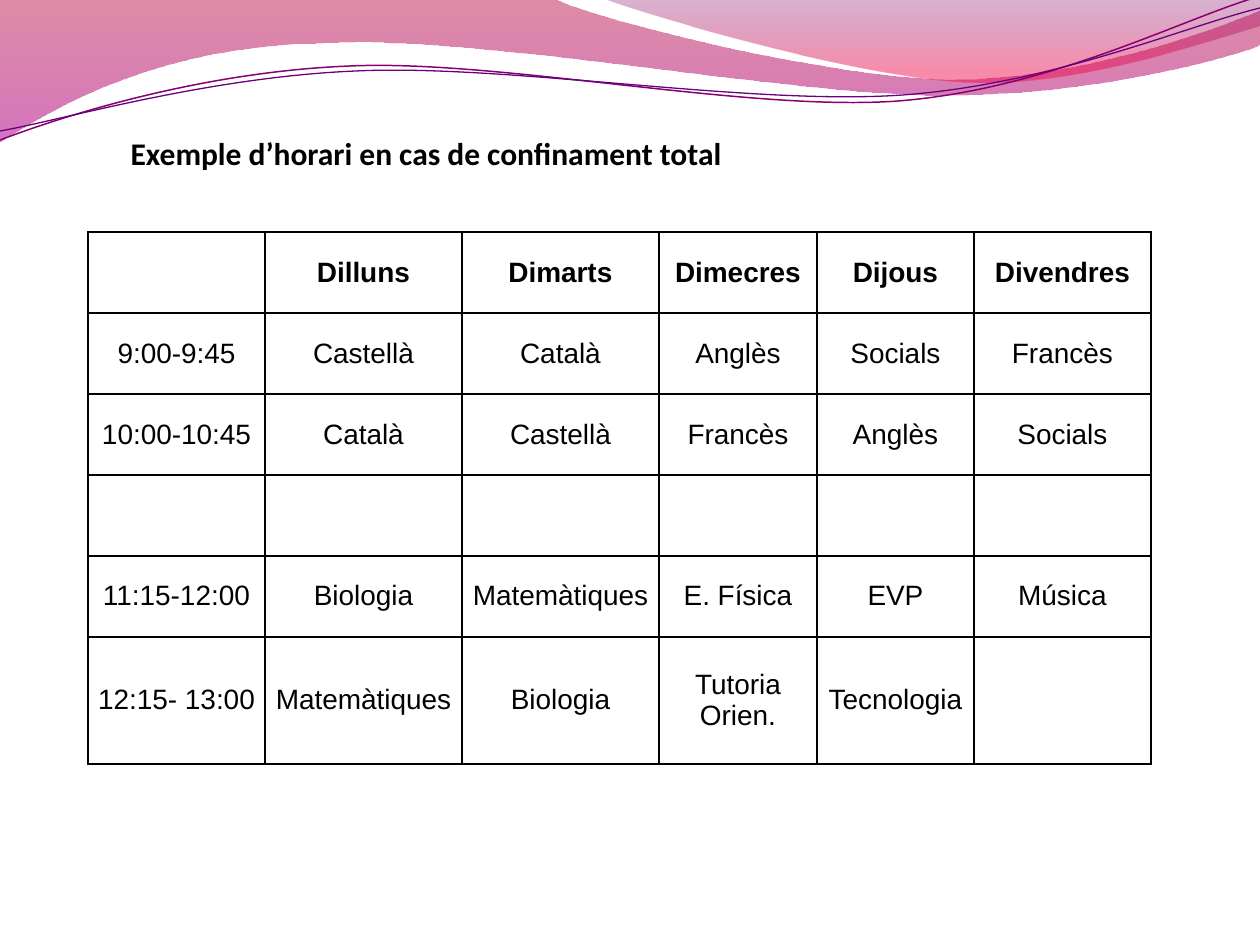
from lxml.etree import SubElement
from pptx import Presentation
from pptx.dml.color import RGBColor
from pptx.enum.text import MSO_ANCHOR, MSO_AUTO_SIZE, PP_ALIGN
from pptx.oxml.ns import qn
from pptx.util import Pt

PX = 7257
BLACK = RGBColor(0x00, 0x00, 0x00)
ROSE = RGBColor(0xB6, 0x00, 0x3C)
MAGENTA = RGBColor(0xB2, 0x00, 0x8A)
PLUM = RGBColor(0x81, 0x00, 0x66)
CRIMSON = RGBColor(0xF0, 0x00, 0x45)
PURPLE = RGBColor(0x88, 0x00, 0x6F)
VIOLET = RGBColor(0x68, 0x00, 0x7F)

BACK_WAVE = [
    [(0, 0)], [(554, -1)],
    [(600, 21), (837, 79), (955, 79)], [(1075, 79), (1207, 33), (1260, 11)],
    [(1261, 45)],
    [(1239, 55), (1096, 96), (940, 95)], [(784, 95), (481, 35), (324, 43)],
    [(163, 45), (58, 105), (-1, 142)],
]
FRONT_WAVE = [
    [(604, -1)],
    [(641, 14), (859, 78), (969, 82)], [(1076, 87), (1211, 40), (1260, 26)],
    [(1260, 0)],
]
UPPER_LINE = [
    [(0, 140)],
    [(60, 117), (199, 72), (349, 66)], [(498, 59), (747, 112), (898, 101)],
    [(1050, 89), (1182, 19), (1257, -3)],
]
LOWER_LINE = [
    [(0, 131)],
    [(59, 121), (207, 77), (357, 71)], [(508, 64), (752, 106), (903, 95)],
    [(1053, 84), (1186, 26), (1260, 8)],
]

TITLE = "Exemple d’horari en cas de confinament total"
TIMETABLE = [
    ["", "Dilluns", "Dimarts", "Dimecres", "Dijous", "Divendres"],
    ["9:00-9:45", "Castellà", "Català", "Anglès", "Socials", "Francès"],
    ["10:00-10:45", "Català", "Castellà", "Francès", "Anglès", "Socials"],
    ["", "", "", "", "", ""],
    ["11:15-12:00", "Biologia", "Matemàtiques", "E. Física", "EVP", "Música"],
    ["12:15- 13:00", "Matemàtiques", "Biologia", "Tutoria Orien.", "Tecnologia", ""],
]
COLUMN_WIDTHS = [177, 197, 197, 158, 157, 177]
ROW_HEIGHTS = [81, 81, 81, 81, 81, 127]


def px(length):
    return round(length * PX)


def bend_segments(shape, segments):
    outline = next(shape._element.iter(qn("a:path")))
    lines = iter(outline.findall(qn("a:lnTo")))
    for segment in segments[1:]:
        parts = [next(lines) for _ in segment]
        if len(parts) == 3:
            curve = SubElement(outline, qn("a:cubicBezTo"))
            parts[0].addprevious(curve)
            for part in parts:
                curve.append(part[0])
                outline.remove(part)


def add_outline(slide, segments, close):
    start, *rest = [(px(x), px(y)) for segment in segments for x, y in segment]
    builder = slide.shapes.build_freeform(*start)
    builder.add_line_segments(rest, close=close)
    shape = builder.convert_to_shape()
    bend_segments(shape, segments)
    shape.shadow.inherit = False
    return shape


def add_wave(slide, segments, stops):
    shape = add_outline(slide, segments, True)
    shape.fill.gradient()
    shape.fill.gradient_angle = 270
    for stop, (position, color, _) in zip(shape.fill.gradient_stops, stops):
        stop.position = position
        stop.color.rgb = color
    colors = shape._element.spPr.iter(qn("a:srgbClr"))
    for color, (_, _, opacity) in zip(colors, stops):
        SubElement(color, qn("a:alpha"), val=str(opacity * 1000))
    shape.line.fill.background()


def add_curved_line(slide, segments, color, width):
    shape = add_outline(slide, segments, False)
    shape.fill.background()
    shape.line.color.rgb = color
    shape.line.width = Pt(width)


def format_text(paragraph, name, size, bold):
    for run in paragraph.runs:
        run.font.name = name
        run.font.size = Pt(size)
        run.font.bold = bold
        run.font.color.rgb = BLACK


def set_title(slide):
    title = slide.shapes.title
    title.left, title.top, title.width, title.height = map(px, (118, 128, 757, 50))
    frame = title.text_frame
    frame.text = TITLE
    frame.word_wrap = True
    frame.auto_size = MSO_AUTO_SIZE.SHAPE_TO_FIT_TEXT
    frame.vertical_anchor = MSO_ANCHOR.TOP
    paragraph = frame.paragraphs[0]
    paragraph.alignment = PP_ALIGN.JUSTIFY
    properties = paragraph._p.get_or_add_pPr()
    properties.set("marL", str(px(63)))
    properties.set("indent", str(-px(63)))
    format_text(paragraph, "Calibri", 18, True)
    slide.shapes._spTree.append(title._element)


def add_borders(cell):
    properties = cell._tc.get_or_add_tcPr()
    for side in ("a:lnL", "a:lnR", "a:lnT", "a:lnB"):
        line = SubElement(properties, qn(side), w=str(Pt(1)))
        fill = SubElement(line, qn("a:solidFill"))
        SubElement(fill, qn("a:srgbClr"), val=str(BLACK))


def format_cell(cell, text, bold):
    cell.text = text
    cell.vertical_anchor = MSO_ANCHOR.MIDDLE
    cell.margin_left = cell.margin_right = px(9)
    cell.margin_top = cell.margin_bottom = px(9)
    add_borders(cell)
    cell.fill.background()
    paragraph = cell.text_frame.paragraphs[0]
    paragraph.alignment = PP_ALIGN.CENTER
    format_text(paragraph, "Arial", 16, bold)


def add_timetable(slide):
    frame = slide.shapes.add_table(
        len(ROW_HEIGHTS), len(COLUMN_WIDTHS), px(88), px(232),
        px(sum(COLUMN_WIDTHS)), px(sum(ROW_HEIGHTS)))
    table = frame.table
    table.first_row = table.horz_banding = False
    for column, width in zip(table.columns, COLUMN_WIDTHS):
        column.width = px(width)
    for index, (row, height) in enumerate(zip(table.rows, ROW_HEIGHTS)):
        row.height = px(height)
        for cell, text in zip(row.cells, TIMETABLE[index]):
            format_cell(cell, text, index == 0)


def main():
    presentation = Presentation()
    presentation.slide_width = px(1260)
    presentation.slide_height = px(945)
    slide = presentation.slides.add_slide(presentation.slide_layouts[5])
    add_wave(slide, BACK_WAVE, [(0, ROSE, 45), (1, MAGENTA, 55)])
    add_wave(slide, FRONT_WAVE, [(0, PLUM, 30), (0.8, CRIMSON, 45)])
    add_curved_line(slide, UPPER_LINE, PURPLE, 0.85)
    add_curved_line(slide, LOWER_LINE, VIOLET, 0.75)
    add_timetable(slide)
    set_title(slide)
    presentation.save("out.pptx")


if __name__ == "__main__":
    main()
